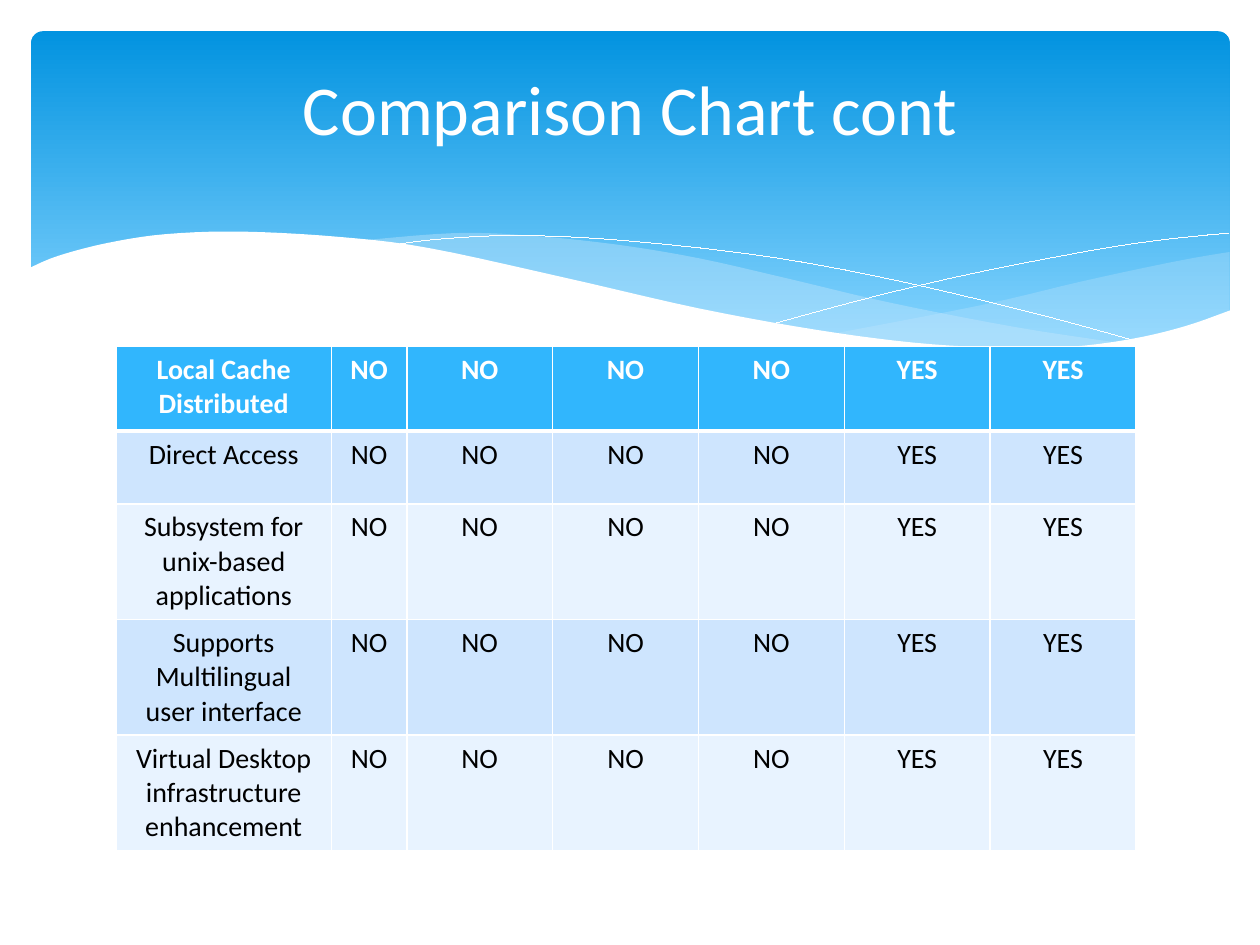
"""Build the comparison table slide with its wave banner."""
from dataclasses import dataclass

from lxml.etree import SubElement
from pptx import Presentation
from pptx.dml.color import RGBColor
from pptx.enum.shapes import MSO_SHAPE
from pptx.enum.text import MSO_ANCHOR, PP_ALIGN
from pptx.oxml import parse_xml
from pptx.oxml.ns import nsdecls, qn
from pptx.util import Cm, Pt


@dataclass(frozen=True)
class Theme:
    font: str = "Calibri"
    title_size: int = 40
    table_size: int = 16
    white: str = "FFFFFF"
    black: str = "000000"
    banner_top: str = "0293E0"
    banner_bottom: str = "83D3FE"
    wave: str = "C6E7FC"
    header: str = "31B6FD"
    bands: tuple = ("CEE5FE", "E8F3FF")


THEME = Theme()

RIGHT_WAVE_TOP = [(24.79, 5.08), (23.75, 5.26), (21.87, 5.66), (19.79, 6.15), (16.79, 6.73)]
RIGHT_WAVE_BOTTOM = [(16.79, 6.73), (18.26, 6.91), (19.53, 7.01), (20.68, 7.06), (21.95, 7.01),
                     (22.99, 6.83), (23.93, 6.58), (24.79, 6.27)]
MIDDLE_WAVE_TOP = [(22.68, 6.93), (20.5, 6.6), (17.93, 6.1), (15.98, 5.64), (14.1, 5.21),
                   (12.42, 4.93), (10.67, 4.75), (9.17, 4.7), (7.26, 4.85)]
MIDDLE_WAVE_BOTTOM = [(7.26, 4.85), (9.19, 5.16), (11.4, 5.64), (14.38, 6.3), (16.51, 6.71),
                      (18.34, 6.96), (20.22, 7.06), (21.54, 7.04), (22.68, 6.93)]
FALLING_LINE = [(7.85, 4.95), (8.74, 4.83), (10.19, 4.75), (11.91, 4.8), (14.12, 5),
                (16.15, 5.28), (18.47, 5.74), (21.11, 6.38), (23.04, 6.91)]
RISING_LINE = [(15.57, 6.53), (17.65, 5.97), (19.71, 5.49), (22, 5.05), (23.47, 4.83),
               (24.77, 4.7)]
FRONT_WAVE = [(0.58, 5.41), (1.17, 5.16), (2.16, 4.9), (3.35, 4.72), (4.9, 4.67), (6.88, 4.78),
              (8.64, 5), (11.35, 5.59), (14.1, 6.22), (16.46, 6.65), (18.44, 6.91),
              (20.14, 7.01), (21.59, 6.99), (22.83, 6.83), (23.88, 6.58), (24.82, 6.25)]
FRONT_BASE = [(24.82, 8.36), (0.58, 8.36)]

FEATURES = ["Local Cache Distributed", "Direct Access", "Subsystem for unix-based applications",
            "Supports Multilingual user interface", "Virtual Desktop infrastructure enhancement"]
ANSWERS = ["NO"] * 4 + ["YES"] * 2
COLUMN_WIDTHS = [4.34, 1.52] + [2.94] * 5
ROW_HEIGHTS = [1.7, 1.47] + [2.33] * 3


def color(value):
    """Return the RGB color for a hex value."""
    return RGBColor.from_string(value)


def smooth_curve(knots, steps=5):
    """Return points of a Catmull-Rom curve through the knots."""
    padded = [knots[0], *knots, knots[-1]]
    points = [knots[0]]
    for before, start, end, after in zip(padded, padded[1:], padded[2:], padded[3:]):
        for step in range(1, steps + 1):
            t = step / steps
            points.append(tuple(
                (2 * b + (c - a) * t + (2 * a - 5 * b + 4 * c - d) * t ** 2
                 + (3 * b - a - 3 * c + d) * t ** 3) / 2
                for a, b, c, d in zip(before, start, end, after)))
    return points


def add_outline(slide, points, closed):
    """Draw a freeform through points given in centimetres."""
    lengths = [(Cm(x), Cm(y)) for x, y in points]
    builder = slide.shapes.build_freeform(*lengths[0], scale=1.0)
    builder.add_line_segments(lengths[1:], close=closed)
    shape = builder.convert_to_shape()
    shape.shadow.inherit = False
    return shape


def add_wave(slide, points, fill, opacity=100):
    """Add a filled wave without an outline."""
    shape = add_outline(slide, points, True)
    shape.fill.solid()
    shape.fill.fore_color.rgb = color(fill)
    shape.line.fill.background()
    if opacity < 100:
        fill_color = shape.fill._xPr.find(qn("a:solidFill"))[0]
        SubElement(fill_color, qn("a:alpha")).set("val", str(opacity * 1000))


def add_wave_line(slide, knots):
    """Add a white hairline curve."""
    shape = add_outline(slide, smooth_curve(knots), False)
    shape.fill.background()
    shape.line.color.rgb = color(THEME.white)
    shape.line.width = Pt(0.01)


def add_banner(slide):
    """Add the rounded gradient panel behind the title."""
    shape = slide.shapes.add_shape(
        MSO_SHAPE.ROUNDED_RECTANGLE, Cm(0.63), Cm(0.63), Cm(24.16), Cm(6.86))
    shape.adjustments[0] = 0.034
    shape.shadow.inherit = False
    shape.line.fill.background()
    shape.fill.gradient()
    shape.fill.gradient_angle = 270
    stops = zip(shape.fill.gradient_stops, (0, 0.9), (THEME.banner_top, THEME.banner_bottom))
    for stop, position, value in stops:
        stop.position = position
        stop.color.rgb = color(value)


def write_text(frame, text, size, value, bold=False):
    """Write one centred paragraph into a text frame."""
    frame.word_wrap = True
    paragraph = frame.paragraphs[0]
    paragraph.text = text
    paragraph.alignment = PP_ALIGN.CENTER
    paragraph.font.name = THEME.font
    paragraph.font.size = Pt(size)
    paragraph.font.bold = bold
    paragraph.font.color.rgb = color(value)


def add_title(slide, text):
    """Add the slide title."""
    box = slide.shapes.add_textbox(Cm(1.27), Cm(0.94), Cm(22.86), Cm(2.44))
    box.text_frame.vertical_anchor = MSO_ANCHOR.MIDDLE
    write_text(box.text_frame, text, THEME.title_size, THEME.white)


def set_borders(cell, widths):
    """Give a cell white borders with a width for each side."""
    properties = cell._tc.get_or_add_tcPr()
    for index, (side, width) in enumerate(widths.items()):
        properties.insert(index, parse_xml(
            f'<a:ln{side} {nsdecls("a")} w="{Pt(width)}"><a:solidFill>'
            f'<a:srgbClr val="{THEME.white}"/></a:solidFill></a:ln{side}>'))


def add_comparison_table(slide):
    """Add the feature table with a header row and alternating bands."""
    table = slide.shapes.add_table(
        len(FEATURES), len(COLUMN_WIDTHS), Cm(2.34), Cm(6.99),
        Cm(sum(COLUMN_WIDTHS)), Cm(sum(ROW_HEIGHTS))).table
    for column, width in zip(table.columns, COLUMN_WIDTHS):
        column.width = Cm(width)
    for index, (feature, height) in enumerate(zip(FEATURES, ROW_HEIGHTS)):
        is_header = index == 0
        row = table.rows[index]
        row.height = Cm(height)
        for cell, text in zip(row.cells, [feature, *ANSWERS]):
            cell.fill.solid()
            cell.fill.fore_color.rgb = color(
                THEME.header if is_header else THEME.bands[(index - 1) % 2])
            write_text(cell.text_frame, text, THEME.table_size,
                       THEME.white if is_header else THEME.black, is_header)
            set_borders(cell, {"L": 1, "R": 1, "T": 3 if index == 1 else 1,
                               "B": 3 if is_header else 1})


def main():
    """Build and save the presentation."""
    presentation = Presentation()
    presentation.slide_width = Cm(25.4)
    presentation.slide_height = Cm(19.05)
    slide = presentation.slides.add_slide(presentation.slide_layouts[6])
    add_banner(slide)
    add_wave(slide, smooth_curve(RIGHT_WAVE_TOP) + smooth_curve(RIGHT_WAVE_BOTTOM),
             THEME.wave, 29)
    add_wave(slide, smooth_curve(MIDDLE_WAVE_TOP) + smooth_curve(MIDDLE_WAVE_BOTTOM),
             THEME.wave, 40)
    add_wave_line(slide, FALLING_LINE)
    add_wave_line(slide, RISING_LINE)
    add_wave(slide, smooth_curve(FRONT_WAVE) + FRONT_BASE, THEME.white)
    add_comparison_table(slide)
    add_title(slide, "Comparison Chart cont")
    presentation.save("out.pptx")


if __name__ == "__main__":
    main()
